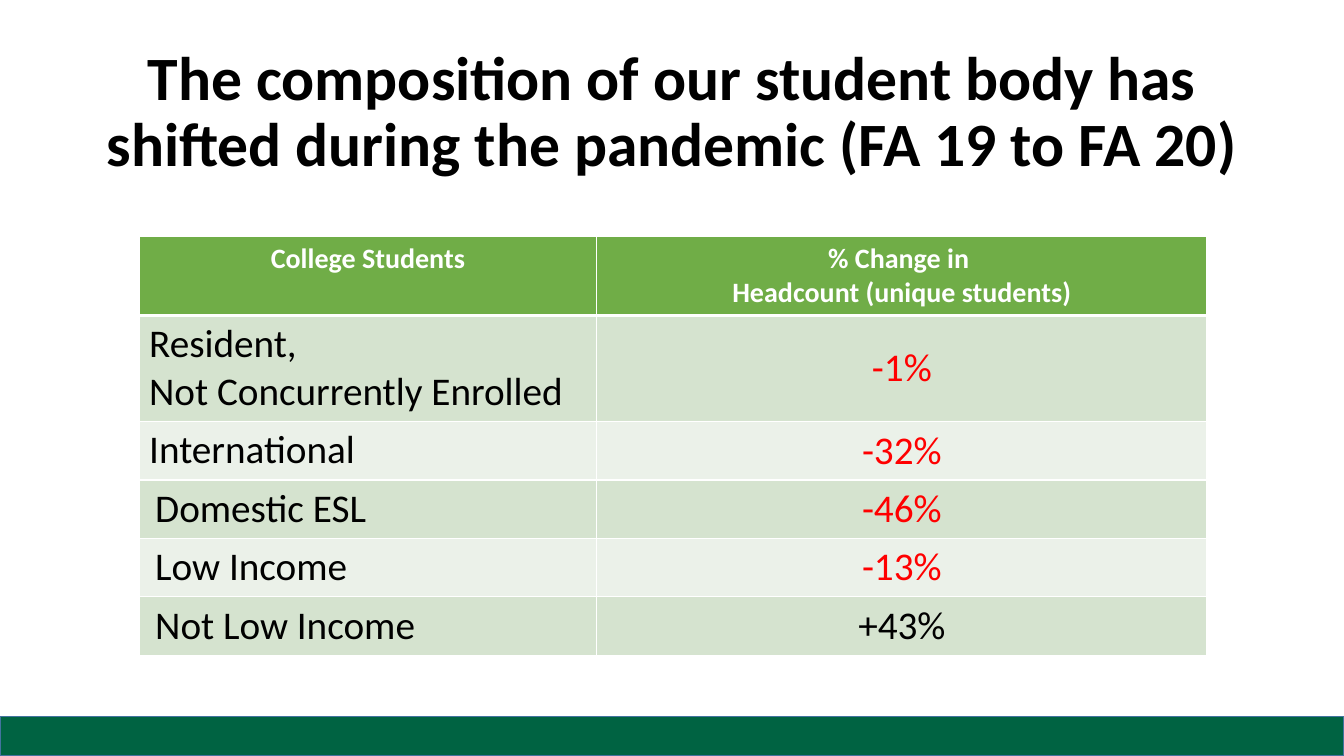
import pptx
import pptx.dml.color
import pptx.enum.shapes
import pptx.enum.text
import pptx.oxml
import pptx.oxml.ns
import pptx.util
from dataclasses import dataclass

ALIGN = pptx.enum.text.PP_ALIGN
ANCHOR = pptx.enum.text.MSO_ANCHOR


@dataclass(frozen=True)
class Theme:
    font: str = "Calibri"
    text: str = "000000"
    loss: str = "FF0000"
    white: str = "FFFFFF"
    header: str = "70AD47"
    bands: tuple = ("D5E3CF", "EBF1E9")
    footer: str = "006342"
    footer_line: str = "43739E"
    title_size: int = 44
    header_size: int = 20
    body_size: int = 28


THEME = Theme()
TITLE = "The composition of our student body has shifted during the pandemic (FA 19 to FA 20)"
HEADINGS = ("College Students", "% Change in \nHeadcount (unique students)")
CHANGES = (
    ("Resident,\nNot Concurrently Enrolled", "-1%"),
    ("International", "-32%"),
    ("Domestic ESL", "-46%"),
    ("Low Income", "-13%"),
    ("Not Low Income", "+43%"),
)
COLUMN_WIDTHS = (454, 605)
ROW_HEIGHTS = (77, 105, 58, 58, 58, 58)
FIRST_INDENTED_ROW = 3


def px(length):
    """Convert px, at 100 to the inch, into EMU."""
    return pptx.util.Emu(length * 9144)


def color(value):
    return pptx.dml.color.RGBColor.from_string(value)


def write_text(frame, text, *, size, ink=THEME.text, bold=False,
               align=ALIGN.LEFT, line_spacing=None):
    """Fill a text frame, one paragraph for each line of text."""
    frame.text = text
    for para in frame.paragraphs:
        para.alignment = align
        para.line_spacing = line_spacing
        for span in para.runs:
            span.font.name = THEME.font
            span.font.size = pptx.util.Pt(size)
            span.font.bold = bold
            span.font.color.rgb = color(ink)


def add_title(page):
    title = page.shapes.title
    title.left, title.top, title.width, title.height = map(px, (92, 40, 1150, 145))
    frame = title.text_frame
    frame.word_wrap = True
    frame.auto_size = pptx.enum.text.MSO_AUTO_SIZE.NONE
    frame.vertical_anchor = ANCHOR.MIDDLE
    write_text(frame, TITLE, size=THEME.title_size, bold=True,
               align=ALIGN.CENTER, line_spacing=0.9)


def add_footer_bar(page):
    bar = page.shapes.add_shape(pptx.enum.shapes.MSO_SHAPE.RECTANGLE,
                                *map(px, (0, 711, 1333, 39)))
    bar.shadow.inherit = False
    bar.fill.solid()
    bar.fill.fore_color.rgb = color(THEME.footer)
    bar.line.color.rgb = color(THEME.footer_line)
    bar.line.width = pptx.util.Pt(1)


def set_borders(cell, widths):
    """Draw white borders; widths are points keyed by side, in L, R, T, B order."""
    properties = cell._tc.get_or_add_tcPr()
    for position, (side, width) in enumerate(widths.items()):
        properties.insert(position, pptx.oxml.parse_xml(
            f'<a:ln{side} {pptx.oxml.ns.nsdecls("a")} w="{pptx.util.Pt(width)}">'
            f'<a:solidFill><a:srgbClr val="{THEME.white}"/></a:solidFill></a:ln{side}>'))


def format_cell(cell, text, row, column):
    is_header = row == 0
    is_value = column == 1
    cell.margin_left = cell.margin_right = px(16 if row >= FIRST_INDENTED_ROW else 10)
    cell.margin_top = cell.margin_bottom = px(5)
    cell.vertical_anchor = ANCHOR.MIDDLE if is_value and not is_header else ANCHOR.TOP
    cell.fill.solid()
    cell.fill.fore_color.rgb = color(THEME.header if is_header else THEME.bands[(row - 1) % 2])
    set_borders(cell, {"L": 1, "R": 1, "T": 3 if row == 1 else 1, "B": 3 if is_header else 1})
    if is_header:
        ink = THEME.white
    else:
        ink = THEME.loss if text.startswith("-") else THEME.text
    write_text(cell.text_frame, text, ink=ink, bold=is_header,
               size=THEME.header_size if is_header else THEME.body_size,
               align=ALIGN.CENTER if is_header or is_value else ALIGN.LEFT)


def add_change_table(page):
    rows = (HEADINGS, *CHANGES)
    table = page.shapes.add_table(len(rows), len(HEADINGS), px(138), px(235),
                                  px(sum(COLUMN_WIDTHS)), px(sum(ROW_HEIGHTS))).table
    for column, width in zip(table.columns, COLUMN_WIDTHS):
        column.width = px(width)
    for row, height in zip(table.rows, ROW_HEIGHTS):
        row.height = px(height)
    for row, texts in enumerate(rows):
        for column, text in enumerate(texts):
            format_cell(table.cell(row, column), text, row, column)


def main():
    deck = pptx.Presentation()
    deck.slide_width, deck.slide_height = px(1333), px(750)
    page = deck.slides.add_slide(deck.slide_layouts.get_by_name("Title Only"))
    add_footer_bar(page)
    add_title(page)
    add_change_table(page)
    deck.save("out.pptx")


if __name__ == "__main__":
    main()
